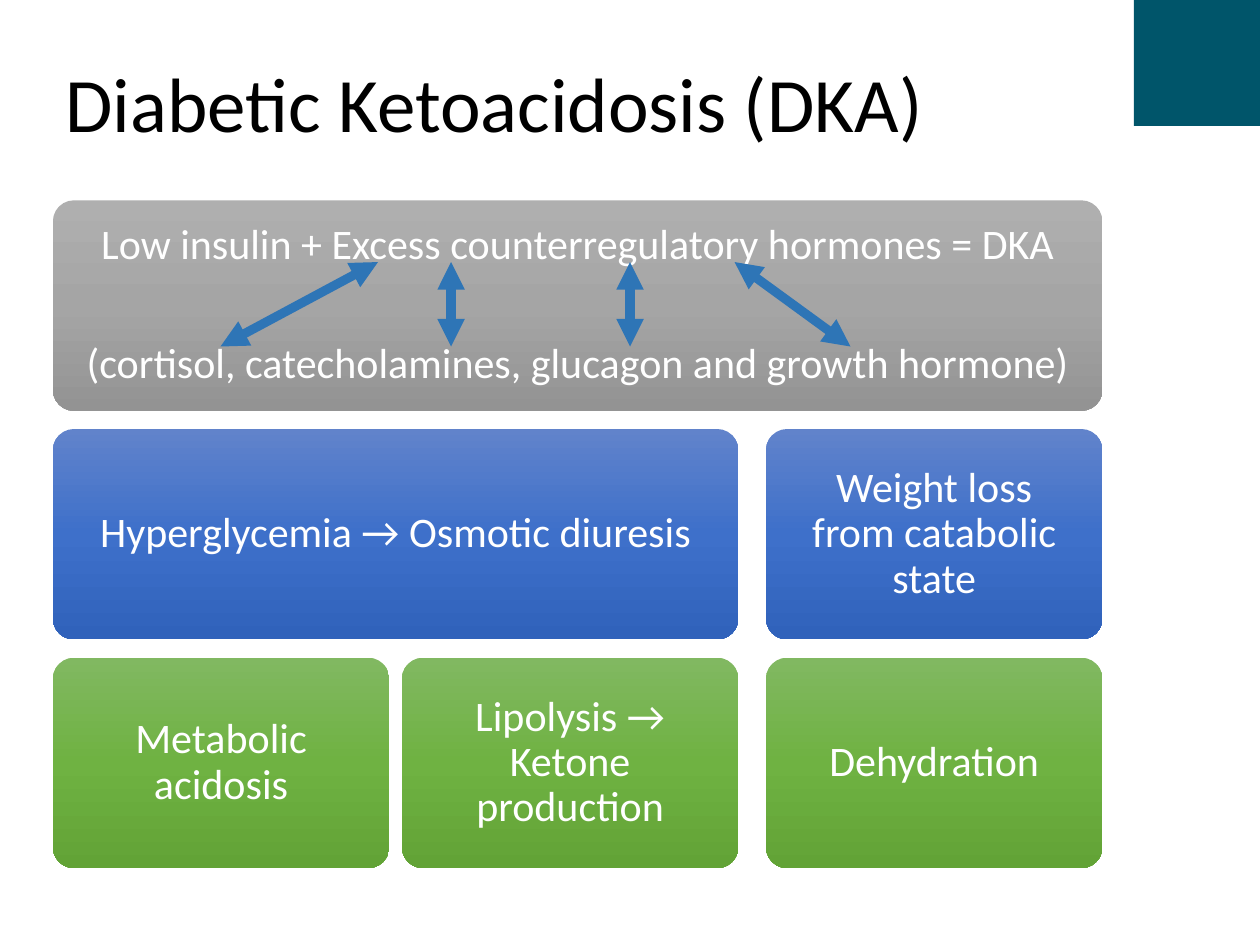
from copy import deepcopy

from pptx import Presentation
from pptx.dml.color import RGBColor
from pptx.enum.shapes import MSO_CONNECTOR as CONN, MSO_SHAPE as SHAPE
from pptx.enum.text import MSO_ANCHOR as ANCHOR, PP_ALIGN as ALIGN
from pptx.oxml.ns import qn
from pptx.oxml.xmlchemy import OxmlElement
from pptx.util import Inches, Pt

TEAL = RGBColor(0x00, 0x55, 0x6A)
BLACK = RGBColor(0x00, 0x00, 0x00)
WHITE = RGBColor(0xFF, 0xFF, 0xFF)
ARROW = RGBColor(0x2E, 0x75, 0xB6)
GRAY = (RGBColor(0xAF, 0xAF, 0xAF), RGBColor(0xA5, 0xA5, 0xA5), RGBColor(0x93, 0x93, 0x93))
BLUE = (RGBColor(0x61, 0x83, 0xCB), RGBColor(0x3E, 0x70, 0xCA), RGBColor(0x30, 0x62, 0xBB))
GREEN = (RGBColor(0x81, 0xB8, 0x61), RGBColor(0x6F, 0xB2, 0x42), RGBColor(0x62, 0xA3, 0x36))


def bezier(p0, p1, p2, p3, steps=60):
    for i in range(1, steps + 1):
        t = i / steps
        u = 1 - t
        yield tuple(u**3 * a + 3 * u * u * t * b + 3 * u * t * t * c + t**3 * d
                    for a, b, c, d in zip(p0, p1, p2, p3))


class Deck:
    FONT = "Calibri"
    COLS = (0.42, 3.19, 6.08)
    COL_W, ROW_H = 2.67, 1.67
    TOP, PITCH = 1.59, 1.815

    def __init__(self, prs):
        self.s = prs.slides.add_slide(prs.slide_layouts[5])

    def style(self, p, size, color, align):
        p.alignment = align
        p.line_spacing = 0.9
        p.font.name = self.FONT
        p.font.size = Pt(size)
        p.font.color.rgb = color

    def title(self, text):
        sp = self.s.shapes.title
        sp.left, sp.top, sp.width, sp.height = map(Inches, (0.42, 0.13, 8.62, 1.45))
        tf = sp.text_frame
        tf.text = text
        tf.vertical_anchor = ANCHOR.MIDDLE
        self.style(tf.paragraphs[0], 44, BLACK, ALIGN.LEFT)

    def swoosh(self):
        edge = (9.99, 1.29)
        curve = bezier(edge, (9.98, 0), (3.36, 0.1), (0.03, 0.1))
        fb = self.s.shapes.build_freeform(0, 0, scale=Inches(1))
        fb.add_line_segments([(10, 0), edge, *curve], close=True)
        sp = fb.convert_to_shape()
        sp.shadow.inherit = False
        sp.fill.solid()
        sp.fill.fore_color.rgb = TEAL
        sp.line.fill.background()
        self.s.shapes.title.element.addprevious(sp.element)

    def box(self, row, col, span, colors, *lines):
        left = self.COLS[col]
        width = self.COLS[col + span - 1] + self.COL_W - left
        at = (left, self.TOP + row * self.PITCH, width, self.ROW_H)
        sp = self.s.shapes.add_shape(SHAPE.ROUNDED_RECTANGLE, *map(Inches, at))
        sp.adjustments[0] = 0.1
        sp.shadow.inherit = False
        sp.line.fill.background()
        self.gradient(sp, colors)
        tf = sp.text_frame
        tf.word_wrap = True
        tf.vertical_anchor = ANCHOR.MIDDLE
        tf.margin_left = tf.margin_right = tf.margin_top = tf.margin_bottom = Inches(0.15)
        for i, line in enumerate(lines):
            p = tf.add_paragraph() if i else tf.paragraphs[0]
            p.text = line
            p.space_before = Pt(42.5 if i else 0)
            self.style(p, 24, WHITE, ALIGN.CENTER)

    def gradient(self, sp, colors):
        sp.fill.gradient()
        sp.fill.gradient_angle = 270
        stops = sp.element.spPr.find(".//" + qn("a:gsLst"))
        stops.append(deepcopy(stops[0]))
        for stop, position, color in zip(sp.fill.gradient_stops, (0, 0.5, 1), colors):
            stop.position = position
            stop.color.rgb = color

    def arrow(self, x1, x2, y1=2.08, y2=2.75):
        c = self.s.shapes.add_connector(CONN.STRAIGHT, *map(Inches, (x1, y1, x2, y2)))
        c.line.color.rgb = ARROW
        c.line.width = Pt(5.25)
        ln = c.line._get_or_add_ln()
        for tag in ("a:headEnd", "a:tailEnd"):
            end = OxmlElement(tag)
            end.set("type", "triangle")
            ln.append(end)
        c.element.spPr.append(OxmlElement("a:effectLst"))


def main():
    prs = Presentation()
    prs.slide_width, prs.slide_height = Inches(10), Inches(7.5)
    deck = Deck(prs)
    deck.swoosh()
    deck.title("Diabetic Ketoacidosis (DKA)")
    deck.box(0, 0, 3, GRAY, "Low insulin + Excess counterregulatory hormones = DKA",
             "(cortisol, catecholamines, glucagon and growth hormone)")
    deck.box(1, 0, 2, BLUE, "Hyperglycemia → Osmotic diuresis")
    deck.box(1, 2, 1, BLUE, "Weight loss from catabolic state")
    results = ("Metabolic acidosis", "Lipolysis → Ketone production", "Dehydration")
    for col, text in enumerate(results):
        deck.box(2, col, 1, GREEN, text)
    for x1, x2 in ((3, 1.75), (3.58, 3.58), (5, 5), (5.83, 6.75)):
        deck.arrow(x1, x2)
    prs.save("out.pptx")


if __name__ == "__main__":
    main()
